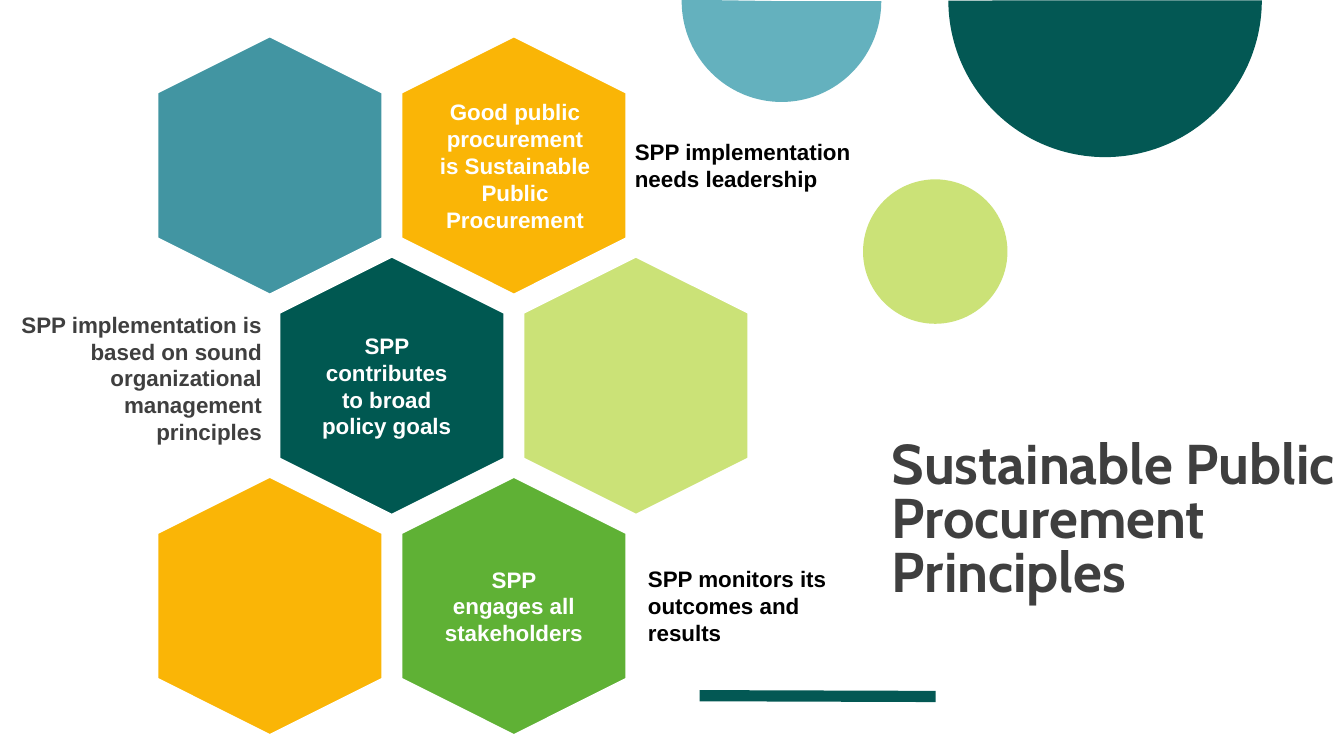
import pptx
import pptx.dml.color
import pptx.enum.shapes
import pptx.enum.text
import pptx.oxml
import pptx.util

Cm = pptx.util.Cm
Pt = pptx.util.Pt
SHAPE = pptx.enum.shapes.MSO_SHAPE
ALIGN = pptx.enum.text.PP_ALIGN
ANCHOR = pptx.enum.text.MSO_ANCHOR

COLORS = {
    "amber": "FAB506",
    "teal": "4295A2",
    "forest": "005851",
    "lime": "CBE277",
    "green": "5FB135",
    "pine": "035854",
    "sky": "64B1BE",
    "white": "FFFFFF",
    "black": "000000",
    "charcoal": "3F3F3F",
}

CELL_LENGTH, CELL_BREADTH = 6.53, 5.69
COLUMN_STEP, ROW_STEP = 6.15, 5.55
LABEL_HEIGHT = 3.91

CELLS = [
    (0, 0, "teal", "", 0, 0),
    (0, 1, "amber", "Good public procurement is Sustainable Public Procurement", 4.27, 0.03),
    (1, 0, "forest", "SPP contributes to broad policy goals", 3.91, -0.13),
    (1, 1, "lime", "", 0, 0),
    (2, 0, "amber", "", 0, 0),
    (2, 1, "green", "SPP engages all stakeholders", 3.91, 0),
]

LABELS = [
    (15.82, 2.21, 7.29, "SPP implementation needs leadership", "black", ALIGN.LEFT),
    (0.23, 7.57, 6.55, "SPP implementation is based on sound organizational management principles",
     "charcoal", ALIGN.RIGHT),
    (16.15, 13.31, 5.69, "SPP monitors its outcomes and results", "black", ALIGN.LEFT),
]


def rgb(name):
    return pptx.dml.color.RGBColor.from_string(COLORS[name])


def add_text(page, bounds, text, color="black", size=16, font="Arial",
             align=ALIGN.LEFT, anchor=ANCHOR.MIDDLE, inset=0.18, spacing=None):
    box = page.shapes.add_textbox(*map(Cm, bounds))
    frame = box.text_frame
    frame.word_wrap = True
    frame.vertical_anchor = anchor
    frame.margin_left = frame.margin_right = Cm(inset)
    frame.margin_top = frame.margin_bottom = Cm(inset)
    para = frame.paragraphs[0]
    para.alignment = align
    if spacing:
        para.line_spacing = spacing
    span = para.add_run()
    span.text = text
    span.font.name = font
    span.font.size = Pt(size)
    span.font.bold = True
    span.font.color.rgb = rgb(color)


def add_filled(page, kind, bounds, color):
    shape = page.shapes.add_shape(kind, *map(Cm, bounds))
    shape.shadow.inherit = False
    shape.fill.solid()
    shape.fill.fore_color.rgb = rgb(color)
    shape.line.fill.background()
    return shape


def add_decoration(page, left, top):
    rule = page.shapes.add_connector(
        pptx.enum.shapes.MSO_CONNECTOR.STRAIGHT,
        Cm(left + 0.45), Cm(top + 17.53), Cm(left + 6.4), Cm(top + 17.55))
    rule.line.color.rgb = rgb("pine")
    rule.line.width = Pt(8)
    properties = rule._element.spPr
    properties.append(pptx.oxml.parse_xml(
        '<a:effectLst xmlns:a="http://schemas.openxmlformats.org/drawingml/2006/main"/>'))
    for x, y, width, height, color, end in (
            (6.72, -3.94, 7.9, 7.9, "pine", 107.96),
            (0, -2.51, 5.03, 5.08, "sky", 108.52)):
        half = add_filled(page, SHAPE.PIE, (left + x, top + y, width, height), color)
        half.adjustments[0] = 0
        half.adjustments[1] = end
    add_filled(page, SHAPE.OVAL, (left + 4.57, top + 4.52, 3.64, 3.64), "lime")


def add_title(page, left, top, width, height):
    add_text(page, (left, top, width, height), "Sustainable Public Procurement Principles",
             color="charcoal", size=40, font="Cabin", anchor=ANCHOR.BOTTOM,
             inset=0, spacing=0.8)


def add_honeycomb(page, left, top):
    for row, column, color, text, width, shift in CELLS:
        center = left + (column + row % 2 / 2) * COLUMN_STEP
        middle = top + row * ROW_STEP
        cell = add_filled(page, SHAPE.HEXAGON, (
            center - CELL_LENGTH / 2, middle - CELL_BREADTH / 2,
            CELL_LENGTH, CELL_BREADTH), color)
        cell.adjustments[0] = 0.25
        cell.rotation = 90
        cell.line.color.rgb = rgb("white")
        cell.line.width = Pt(2)
        if text:
            add_text(page, (center + shift - width / 2, middle - 2.25, width, 4.5),
                     text, color="white", align=ALIGN.CENTER)


def add_labels(page):
    for left, top, width, text, color, align in LABELS:
        add_text(page, (left, top, width, LABEL_HEIGHT), text, color=color, align=align)


def main():
    deck = pptx.Presentation()
    deck.slide_width, deck.slide_height = Cm(33.87), Cm(19.05)
    page = deck.slides.add_slide(deck.slide_layouts[6])
    add_decoration(page, 17.18, 0)
    add_title(page, 22.48, 7.37, 11.4, 7.82)
    add_honeycomb(page, 6.8, 4.17)
    add_labels(page)
    deck.save("out.pptx")


if __name__ == "__main__":
    main()
